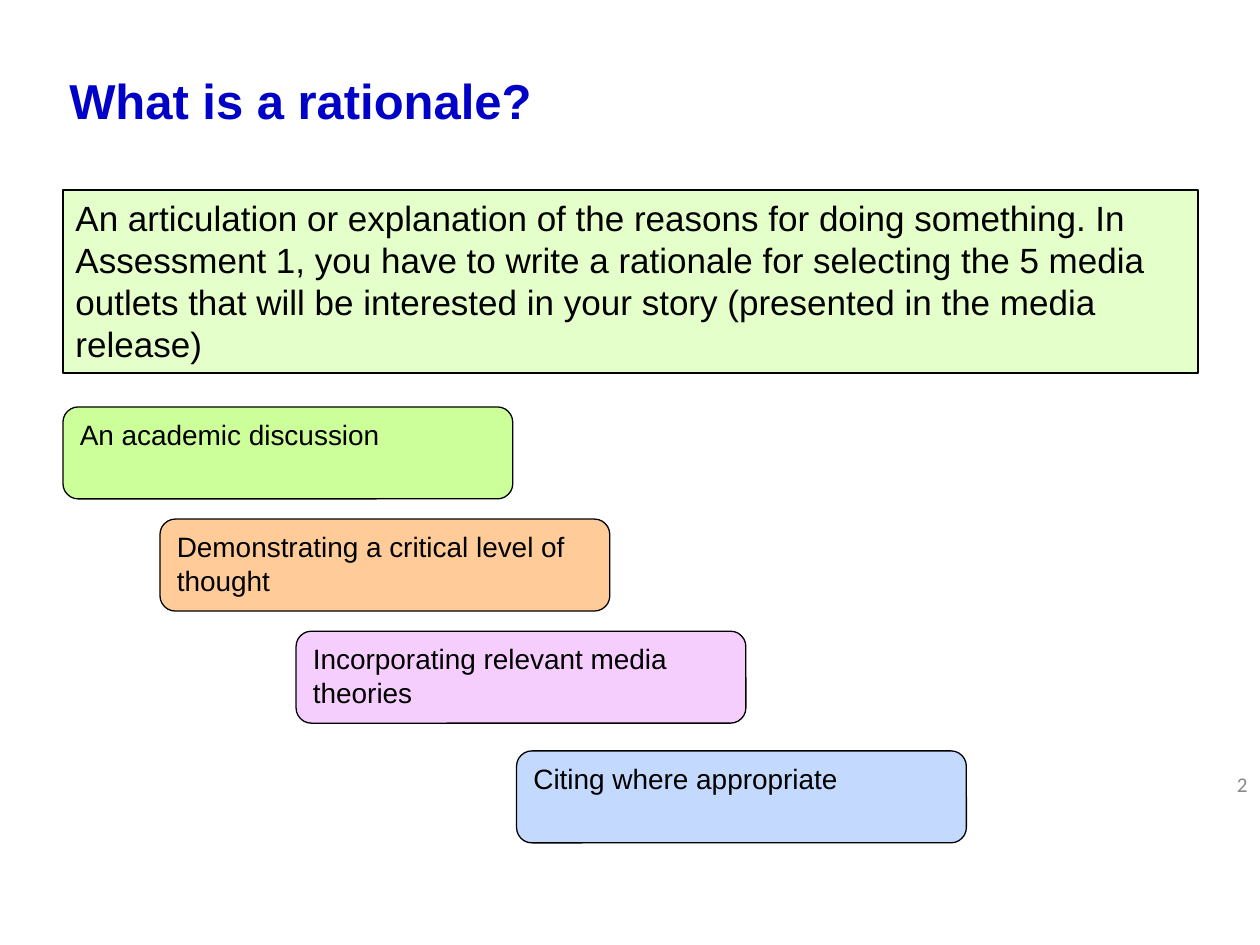
from pptx import Presentation
from pptx import util as u
from pptx.dml.color import RGBColor
from pptx.enum import shapes, text

COLORS = {
    "title": "0000C8", "ink": "000000", "number": "898989",
    "definition": "E4FFC9", "green": "CCFF99", "orange": "FFCC99",
    "pink": "F6CEFE", "blue": "C3D9FD",
}
COLS, ROWS = 100, 75  # grid cells of a tenth of an inch


class Deck:
    """Holds the style and the current slide."""

    def __init__(self):
        self.prs = Presentation()
        self.prs.slide_width, self.prs.slide_height = u.Inches(10), u.Inches(7.5)
        self.s = self.prs.slides.add_slide(self.prs.slide_layouts[5])

    def box(self, col, row, cols, rows):
        dx, dy = self.prs.slide_width / COLS, self.prs.slide_height / ROWS
        return [round(v) for v in (col * dx, row * dy, cols * dx, rows * dy)]

    def put_text(self, sp, words, color="ink", align=text.PP_ALIGN.LEFT,
                 anchor=text.MSO_ANCHOR.TOP, top=0.05, **font):
        tf = sp.text_frame
        frame = {"word_wrap": True, "auto_size": text.MSO_AUTO_SIZE.NONE,
                 "vertical_anchor": anchor, "margin_top": u.Inches(top)}
        for name, value in frame.items():
            setattr(tf, name, value)
        p = tf.paragraphs[0]
        p.alignment = align
        r = p.add_run()
        r.text = words
        for name, value in ({"name": "Arial", "bold": False} | font).items():
            setattr(r.font, name, value)
        r.font.color.rgb = RGBColor.from_string(COLORS[color])

    def title(self, words, *cells):
        sp = self.s.shapes.title
        sp.left, sp.top, sp.width, sp.height = self.box(*cells)
        self.put_text(sp, words, "title", top=0.09, size=u.Pt(28), bold=True)

    def number(self, words, *cells):
        sp = self.s.shapes.add_textbox(*self.box(*cells))
        self.put_text(sp, words, "number", text.PP_ALIGN.RIGHT,
                      text.MSO_ANCHOR.MIDDLE, name="Calibri", size=u.Pt(12))

    def panel(self, words, fill, *cells, kind="ROUNDED_RECTANGLE", line=0.75, size=16):
        sp = self.s.shapes.add_shape(
            getattr(shapes.MSO_SHAPE, kind), *self.box(*cells))
        sp.shadow.inherit = False
        sp.fill.solid()
        sp.fill.fore_color.rgb = RGBColor.from_string(COLORS[fill])
        sp.line.color.rgb = RGBColor.from_string(COLORS["ink"])
        sp.line.width = u.Pt(line)
        self.put_text(sp, words, size=u.Pt(size))


def main():
    deck = Deck()

    # Heading and slide number
    deck.title("What is a rationale?", 4.5, 4.7, 90.3, 7.1)
    deck.number("2", 76.7, 60.2, 23.3, 4)

    # Definition
    deck.panel(
        "An articulation or explanation of the reasons for doing something. "
        "In Assessment 1, you have to write a rationale for selecting the "
        "5 media outlets that will be interested in your story (presented "
        "in the media release)",
        "definition", 5, 15.1, 90.1, 14.5, kind="RECTANGLE", line=1, size=20)

    # Descending steps
    steps = [
        ("An academic discussion", "green", 5, 32.3),
        ("Demonstrating a critical level of thought", "orange", 12.7, 41.2),
        ("Incorporating relevant media theories", "pink", 23.5, 50.1),
        ("Citing where appropriate", "blue", 41, 59.6),
    ]
    for words, fill, col, row in steps:
        deck.panel(words, fill, col, row, 35.7, 7.3)

    deck.prs.save("out.pptx")


if __name__ == "__main__":
    main()
